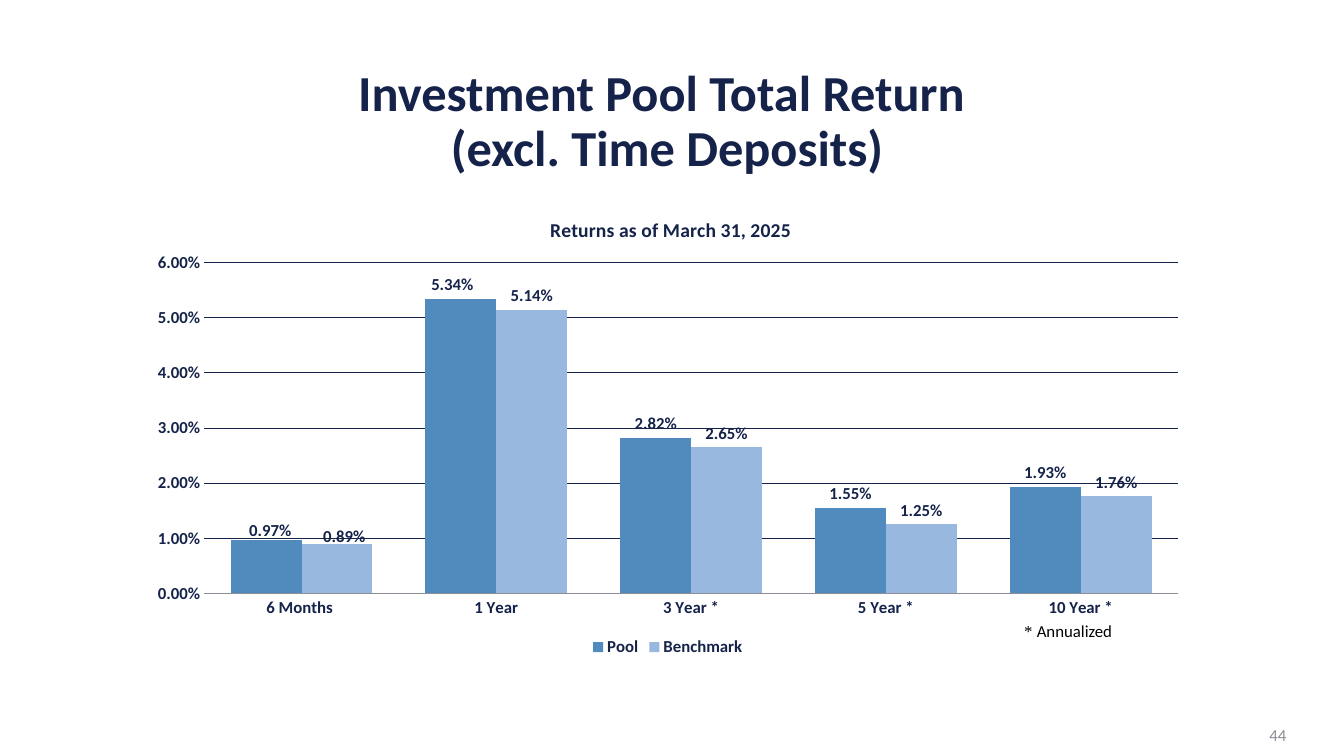
from dataclasses import dataclass
from typing import Any

from lxml import etree
from pptx import Presentation
from pptx.chart.data import CategoryChartData
from pptx.dml.color import RGBColor
from pptx.enum.chart import XL_CHART_TYPE, XL_LABEL_POSITION, XL_LEGEND_POSITION, XL_TICK_MARK
from pptx.enum.text import MSO_ANCHOR, PP_ALIGN
from pptx.oxml.ns import qn
from pptx.util import Pt

CLUSTERED = XL_CHART_TYPE.COLUMN_CLUSTERED
OUTSIDE_END = XL_LABEL_POSITION.OUTSIDE_END
LEGEND_BOTTOM = XL_LEGEND_POSITION.BOTTOM
NO_TICKS = XL_TICK_MARK.NONE
TOP, MIDDLE = MSO_ANCHOR.TOP, MSO_ANCHOR.MIDDLE
CENTER, RIGHT = PP_ALIGN.CENTER, PP_ALIGN.RIGHT


@dataclass(frozen=True)
class Theme:
    heading: str = "152249"
    navy: str = "15234A"
    gray: str = "8C8D96"
    black: str = "000000"
    font: str = "Calibri"
    serif: str = "Times New Roman"
    title_size: float = 36
    chart_title_size: float = 14
    body_size: float = 12
    small_size: float = 10


@dataclass(frozen=True)
class Box:
    left: float
    top: float
    width: float
    height: float

    def lengths(self) -> tuple[Pt, Pt, Pt, Pt]:
        return Pt(self.left), Pt(self.top), Pt(self.width), Pt(self.height)


@dataclass(frozen=True)
class TextRun:
    text: str
    size: float
    font: str


@dataclass(frozen=True)
class ReturnSeries:
    name: str
    values: tuple[float, ...]
    color: str
    label_shifts: dict[int, tuple[float, float]]  # point: share of chart width, height


THEME = Theme()
PERCENT = "0.00%"
PERIODS = ("6 Months ", "1 Year", "3 Year *", "5 Year *", "10 Year *")
RETURNS = (
    ReturnSeries("Pool", (0.0097, 0.0534, 0.0282, 0.0155, 0.0193), "518ABD",
                 {0: (0.004, 0.01), 1: (-0.008, 0)}),
    ReturnSeries("Benchmark", (0.0089, 0.0514, 0.0265, 0.0125, 0.0176), "98B8E0",
                 {0: (0.007, 0.014)}),
)


def format_font(font: Any, size: float = THEME.body_size, color: str = THEME.navy,
                bold: bool = True, name: str = THEME.font) -> None:
    font.size, font.bold, font.name = Pt(size), bold, name
    font.color.rgb = RGBColor.from_string(color)


def add_text(slide: Any, box: Box, runs: list[TextRun], *, color: str,
             bold: bool = False, align: Any = CENTER, anchor: Any = TOP,
             line_spacing: float = 1.0) -> None:
    frame = slide.shapes.add_textbox(*box.lengths()).text_frame
    frame.word_wrap = True
    frame.vertical_anchor = anchor
    paragraph = frame.paragraphs[0]
    paragraph.alignment = align
    paragraph.line_spacing = line_spacing
    for text_run in runs:
        for index, line in enumerate(text_run.text.split("\n")):
            if index:
                paragraph.add_line_break()
            run = paragraph.add_run()
            run.text = line
            format_font(run.font, text_run.size, color, bold, text_run.font)


def set_layout(parent: Any, index: int, **settings: Any) -> None:
    """Give a chart part a manual layout, as shares of the chart's size."""
    for old_layout in parent.findall(qn("c:layout")):
        parent.remove(old_layout)
    layout = etree.Element(qn("c:layout"))
    manual = etree.SubElement(layout, qn("c:manualLayout"))
    for name, value in settings.items():
        etree.SubElement(manual, qn(f"c:{name}")).set("val", str(value))
    parent.insert(index, layout)


def format_line(line: Any, color: str) -> None:
    line.width = Pt(0.5)
    line.color.rgb = RGBColor.from_string(color)


def format_series(series: Any, source: ReturnSeries) -> None:
    series.format.fill.solid()
    series.format.fill.fore_color.rgb = RGBColor.from_string(source.color)
    labels = series.data_labels
    labels.show_value = True
    labels.position = OUTSIDE_END
    labels.number_format, labels.number_format_is_linked = PERCENT, False
    format_font(labels.font)

    # Labels moved off their automatic place
    for point, (shift_x, shift_y) in source.label_shifts.items():
        label = series.points[point].data_label
        format_font(label.font)
        label.position = OUTSIDE_END
        element = labels._element.xpath(f'c:dLbl[c:idx/@val="{point}"]')[0]
        set_layout(element, 1, x=shift_x, y=shift_y)
        number_format = etree.Element(qn("c:numFmt"), formatCode=PERCENT, sourceLinked="0")
        element.insert(2, number_format)


def add_returns_chart(slide: Any, box: Box) -> None:
    data = CategoryChartData(number_format=PERCENT)
    data.categories = PERIODS
    for source in RETURNS:
        data.add_series(source.name, source.values)
    chart = slide.shapes.add_chart(CLUSTERED, *box.lengths(), data).chart
    format_font(chart.font)

    # Chart title and legend
    chart.has_title = True
    title = chart.chart_title
    title.include_in_layout = False
    title.text_frame.text = "Returns as of March 31, 2025"
    format_font(title.text_frame.paragraphs[0].runs[0].font, THEME.chart_title_size)
    set_layout(title._element, 1, xMode="edge", yMode="edge", x=0.386, y=0.045)
    chart.has_legend = True
    chart.legend.position = LEGEND_BOTTOM
    chart.legend.include_in_layout = False
    format_font(chart.legend.font)

    # Axes
    for axis in (chart.category_axis, chart.value_axis):
        axis.major_tick_mark = axis.minor_tick_mark = NO_TICKS
        format_font(axis.tick_labels.font)
    format_line(chart.category_axis.format.line, THEME.gray)
    values = chart.value_axis
    values.minimum_scale, values.maximum_scale, values.major_unit = 0, 0.06, 0.01
    values.tick_labels.number_format = PERCENT
    values.tick_labels.number_format_is_linked = False
    values.format.line.fill.background()
    format_line(values.major_gridlines.format.line, THEME.navy)

    # Columns
    plot = chart.plots[0]
    plot.gap_width, plot.overlap, plot.vary_by_categories = 75, 0, False
    for series, source in zip(plot.series, RETURNS):
        format_series(series, source)
    plot_area = chart._chartSpace.chart.plotArea
    set_layout(plot_area, 0, layoutTarget="inner", xMode="edge", yMode="edge",
               x=0.064, y=0.151, w=0.916, h=0.705)


def main() -> None:
    presentation = Presentation()
    presentation.slide_width, presentation.slide_height = Pt(960), Pt(540)
    slide = presentation.slides.add_slide(presentation.slide_layouts[6])

    # Heading
    add_text(slide, Box(152.64, 42.48, 648, 90),
             [TextRun("Investment Pool Total Return \n(excl. Time Deposits)",
                      THEME.title_size, THEME.font)],
             color=THEME.heading, bold=True, anchor=MIDDLE, line_spacing=0.9)

    add_returns_chart(slide, Box(97.2, 136.8, 759.6, 335.52))

    # Footnote
    add_text(slide, Box(635.76, 439.92, 252, 21.6),
             [TextRun(" ", THEME.small_size, THEME.serif),
              TextRun("* ", THEME.body_size, THEME.serif),
              TextRun("Annualized", THEME.body_size, THEME.font)],
             color=THEME.black)

    # Slide number
    add_text(slide, Box(709.92, 510.48, 216, 28.8),
             [TextRun("44", THEME.body_size, THEME.font)],
             color=THEME.gray, align=RIGHT, anchor=MIDDLE)

    presentation.save("out.pptx")


if __name__ == "__main__":
    main()
